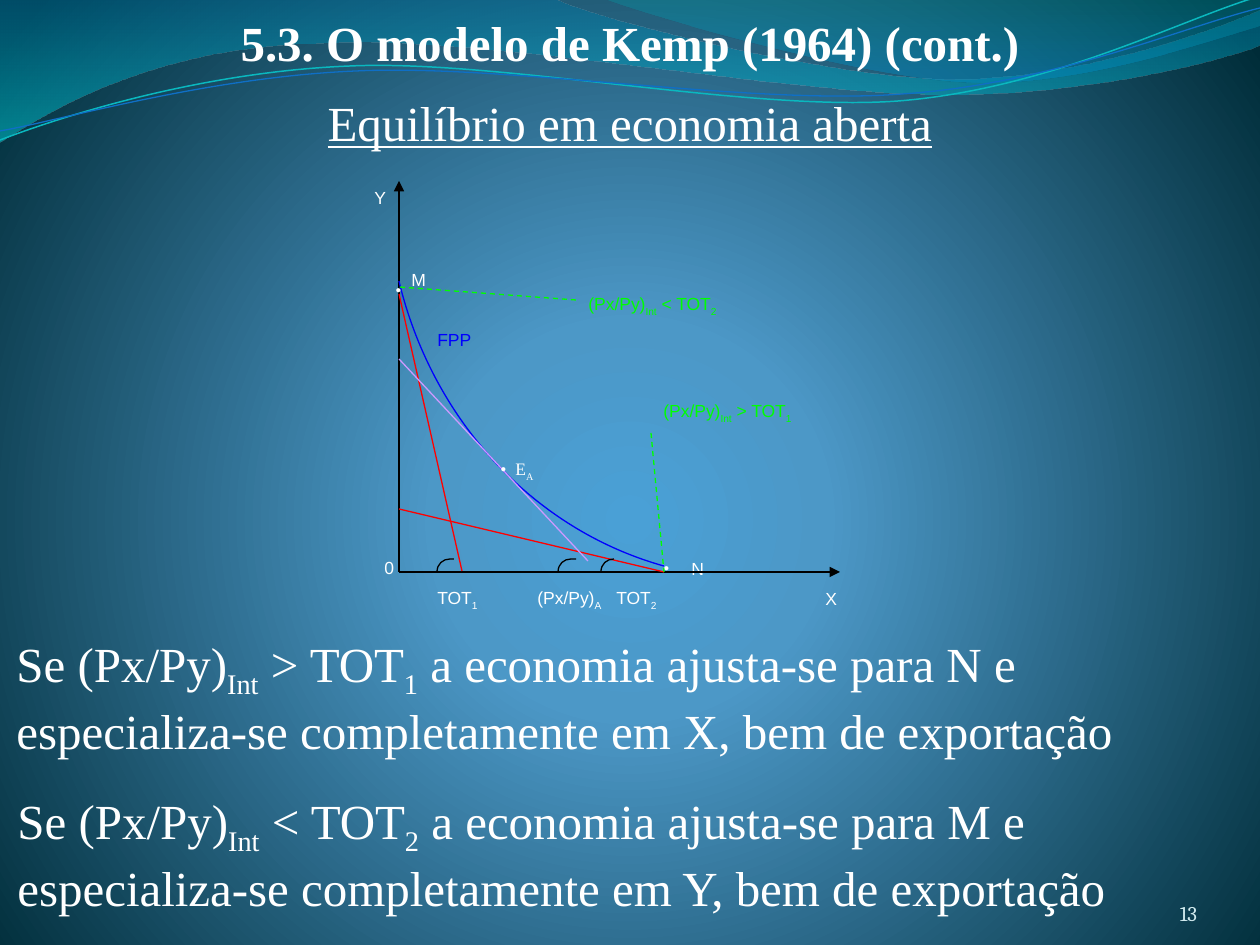
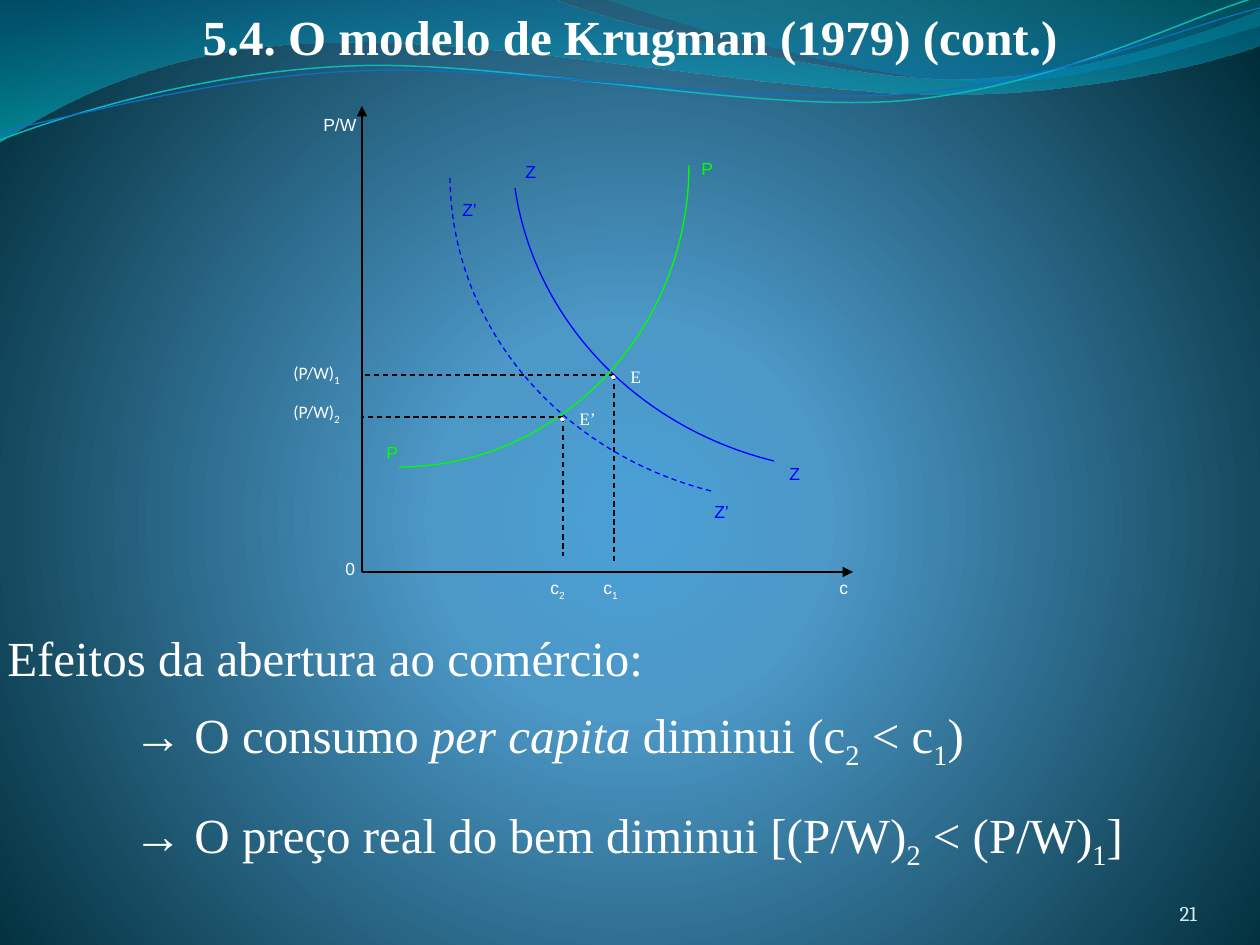
from collections import namedtuple

import pptx
import pptx.dml.color
import pptx.enum.dml
import pptx.enum.shapes
import pptx.enum.text
import pptx.oxml
import pptx.oxml.ns
import pptx.util
from lxml import etree

PX = 914400 / 126
WIDTH, HEIGHT = 1260, 945
WHITE, BLACK, BLUE, GREEN = "FFFFFF", "000000", "0000FF", "00FF00"
RED, VIOLET, PALE = "FF0000", "CC99FF", "D1EAEE"
SERIF, SANS = "Times New Roman", "Arial"
ALIGN = pptx.enum.text.PP_ALIGN
ANCHOR = pptx.enum.text.MSO_ANCHOR
qn = pptx.oxml.ns.qn

Run = namedtuple("Run", "text baseline italic size", defaults=(0, False, None))


def emu(px):
    return pptx.util.Emu(round(px * PX))


def color(hex_string):
    return pptx.dml.color.RGBColor.from_string(hex_string)


def sub(text):
    """Subscript of a diagram label."""
    return Run(text, -30)


def low(text, size=None):
    """Subscript of body text."""
    return Run(text, -25, size=size)


def use_gradient(element, stops, direction):
    """Swap the first solid fill for a gradient of (position, colour, opacity) stops."""
    marks = "".join(
        f'<a:gs pos="{pos * 1000}"><a:srgbClr val="{tint}">'
        f'<a:alpha val="{opacity * 1000}"/></a:srgbClr></a:gs>'
        for pos, tint, opacity in stops)
    gradient = pptx.oxml.parse_xml(
        f'<a:gradFill {pptx.oxml.ns.nsdecls("a")} rotWithShape="1">'
        f"<a:gsLst>{marks}</a:gsLst>{direction}</a:gradFill>")
    solid = element.find(".//" + qn("a:solidFill"))
    solid.getparent().replace(solid, gradient)


class Deck:
    GLOW = [(0, "4AA0D6", 100), (25, "4C98C7", 100), (100, "002C38", 100)]
    GLOW_CENTRE = ('<a:path path="circle"><a:fillToRect l="10000" t="110000" '
                   'r="10000" b="100000"/></a:path>')
    DOWNWARD = '<a:lin ang="5400000" scaled="0"/>'

    def __init__(self):
        self.prs = pptx.Presentation()
        self.prs.slide_width, self.prs.slide_height = emu(WIDTH), emu(HEIGHT)
        self.slide = None
        self.label_width = 0

    # Shared look: background, waves, title and page number
    def new_slide(self, title, title_top, number, label_width):
        self.slide = self.prs.slides.add_slide(self.prs.slide_layouts[6])
        self.label_width = label_width
        self.slide.background.fill.solid()
        use_gradient(self.slide.background.fill._xPr, self.GLOW, self.GLOW_CENTRE)
        self.waves()
        self.heading(title_top, title, bold=True)
        self.text(1092, 876, 105, 50, [number], 12, "Cambria", PALE,
                  align=ALIGN.RIGHT, anchor=ANCHOR.BOTTOM, inset=0)

    def waves(self):
        self.curve((0, 0), (554, -1), (600, 21, 837, 79, 955, 79),
                   (1075, 79, 1207, 33, 1260, 11), (1261, 45),
                   (1239, 55, 1096, 96, 940, 94), (784, 94, 481, 35, 324, 43),
                   (163, 45, 58, 105, -1, 142),
                   gradient=[(0, "0074A1", 45), (100, "00C6CF", 55)])
        self.curve((604, -1), (641, 14, 859, 78, 969, 82),
                   (1079, 87, 1211, 40, 1260, 26), (1260, 0),
                   gradient=[(0, "00A1A9", 30), (80, "008BBF", 45)])
        self.curve((0, 140), (60, 117, 199, 72, 349, 66),
                   (498, 59, 747, 112, 898, 101), (1050, 89, 1182, 19, 1257, -3),
                   tint="0AB8BF", weight=0.85)
        self.curve((0, 131), (59, 121, 207, 77, 357, 71),
                   (508, 64, 752, 106, 903, 94), (1053, 84, 1186, 26, 1260, 8),
                   tint="0F6FC6")

    # Text
    def text(self, x, y, w, h, runs, size, font, tint, align=ALIGN.LEFT,
             anchor=ANCHOR.TOP, inset=None, bold=False, underline=False):
        frame = self.slide.shapes.add_textbox(emu(x), emu(y), emu(w), emu(h)).text_frame
        frame.word_wrap = True
        frame.vertical_anchor = anchor
        if inset is not None:
            frame.margin_left = frame.margin_right = emu(inset)
            frame.margin_top = frame.margin_bottom = emu(inset)
        paragraph = frame.paragraphs[0]
        paragraph.alignment = align
        for item in runs:
            item = Run(item) if isinstance(item, str) else item
            run = paragraph.add_run()
            run.text = item.text
            run.font.name = font
            run.font.size = pptx.util.Pt(item.size or size)
            run.font.color.rgb = color(tint)
            run.font.bold, run.font.underline = bold, underline
            run.font.italic = item.italic
            if item.baseline:
                run.font._element.set("baseline", str(item.baseline * 1000))

    def heading(self, y, words, **style):
        self.text(0, y, WIDTH, 72, [words], 28, SERIF, WHITE, align=ALIGN.CENTER, **style)

    def body(self, x, y, h, *runs, w=WIDTH, anchor=ANCHOR.TOP):
        self.text(x, y, w, h, runs, 28, SERIF, WHITE, anchor=anchor)

    def label(self, x, y, *runs, tint=WHITE, font=SANS, w=None):
        self.text(x, y, w or self.label_width, 50, runs, 10, font, tint)

    def point(self, x, y, *name, gap=0):
        self.label(x, y, "•", font=SERIF)
        if name:
            self.label(x + gap, y, *name, font=SERIF)

    # Lines and curves
    def pen(self, line, tint, weight, dashed):
        line.color.rgb = color(tint)
        line.width = pptx.util.Pt(weight)
        if dashed:
            line.dash_style = pptx.enum.dml.MSO_LINE.DASH

    def line(self, start, end, tint=BLACK, dashed=False, arrow=False):
        connector = self.slide.shapes.add_connector(
            pptx.enum.shapes.MSO_CONNECTOR.STRAIGHT, *map(emu, start + end))
        self.pen(connector.line, tint, 0.75, dashed)
        properties = connector._element.spPr
        if arrow:
            etree.SubElement(properties.find(qn("a:ln")), qn("a:tailEnd"), type="triangle")
        etree.SubElement(properties, qn("a:effectLst"))

    def axes(self, origin, top, right):
        self.line(origin, (origin[0], top), arrow=True)
        self.line(origin, (right, origin[1]), arrow=True)

    def curve(self, start, *segments, tint=None, weight=0.75, dashed=False, gradient=None):
        """Segments are (x, y) for a straight piece or six numbers for a Bézier piece."""
        corners = [(emu(s[i]), emu(s[i + 1])) for s in segments for i in range(0, len(s), 2)]
        builder = self.slide.shapes.build_freeform(emu(start[0]), emu(start[1]), scale=1.0)
        builder.add_line_segments(corners, close=bool(gradient))
        shape = builder.convert_to_shape()
        shape.shadow.inherit = False

        # Join the three corners of each Bézier piece
        outline = shape._element.find(".//" + qn("a:path"))
        steps = iter(outline.findall(qn("a:lnTo")))
        for segment in segments:
            step = next(steps)
            if len(segment) == 6:
                bezier = etree.Element(qn("a:cubicBezTo"))
                step.addprevious(bezier)
                for piece in (step, next(steps), next(steps)):
                    bezier.append(piece[0])
                    outline.remove(piece)

        if gradient:
            shape.fill.solid()
            shape.fill.fore_color.rgb = color(WHITE)
            use_gradient(shape._element.spPr, gradient, self.DOWNWARD)
            shape.line.fill.background()
        else:
            shape.fill.background()
            self.pen(shape.line, tint, weight, dashed)

    def angle_mark(self, left, right, base):
        top = base - 13
        self.curve((right, top), (left + 13, top),
                   (left + 6, top, left, base - 8, left, base), tint=BLACK)


def kemp_slide(deck):
    deck.new_slide("5.3. O modelo de Kemp (1964) (cont.)", 6, "13", label_width=76)
    deck.heading(86, "Equilíbrio em economia aberta", underline=True, anchor=ANCHOR.MIDDLE)

    # Axes, with the corner names beneath them
    origin = (399, 572)
    deck.label(399, 263, "M")
    deck.label(679, 552, "N")
    deck.axes(origin, 181, 840)
    deck.label(813, 582, "X")
    deck.label(362, 181, "Y")
    deck.label(372, 551, "0")

    # Production frontier, terms of trade and autarky price
    deck.curve((664, 566), (535, 530, 433, 422, 399, 281), tint=BLUE)
    deck.label(425, 323, "FPP", tint=BLUE)
    deck.line((399, 294), (462, 571), RED)
    deck.line((664, 572), (399, 509), RED)
    deck.line((399, 359), (588, 561), VIOLET)
    for left, right in ((437, 454), (558, 576), (601, 614)):
        deck.angle_mark(left, right, origin[1])
    deck.label(425, 581, "TOT", sub("1"))
    deck.label(525, 581, "(Px/Py)", sub("A"), w=105)
    deck.label(604, 581, "TOT", sub("2"))

    # Equilibrium points
    deck.point(488, 452, "E", sub("A"), gap=15)
    deck.point(651, 551)
    deck.point(383, 273)

    # International prices
    deck.line((651, 433), (664, 572), GREEN, dashed=True)
    deck.line((576, 300), (399, 287), GREEN, dashed=True)
    for x, y, sign, index in ((651, 394, ">", "1"), (576, 287, "<", "2")):
        deck.label(x, y, "(Px/Py)", sub("Int"), f" {sign} TOT", sub(index),
                   tint=GREEN, w=170)

    # Conclusions
    for x, y, sign, index, corner, good in ((4, 631, ">", "1", "N", "X"),
                                            (5, 788, "<", "2", "M", "Y")):
        deck.body(x, y, 131, "Se (Px/Py)", low("Int"), f" {sign} TOT", low(index),
                  f" a economia ajusta-se para {corner} e especializa-se "
                  f"completamente em {good}, bem de exportação",
                  w=1256, anchor=ANCHOR.MIDDLE)


def krugman_slide(deck):
    deck.new_slide("5.4. O modelo de Krugman (1979) (cont.)", 0, "21", label_width=101)

    # Axes
    origin = (362, 572)
    deck.axes(origin, 106, 853)
    deck.label(827, 571, "c")
    deck.label(333, 552, "0")
    deck.label(311, 108, "P/W")

    # Curves and their names
    deck.curve((774, 461), (636, 427, 534, 319, 515, 188), tint=BLUE)
    deck.curve((399, 467), (559, 467, 689, 331, 689, 165), tint=GREEN)
    deck.curve((711, 491), (557, 452, 450, 323, 450, 175), tint=BLUE, dashed=True)
    for x, y, name, tint in ((374, 436, "P", GREEN), (689, 152, "P", GREEN),
                             (513, 155, "Z", BLUE), (777, 457, "Z", BLUE),
                             (450, 193, "Z’", BLUE), (702, 495, "Z’", BLUE)):
        deck.label(x, y, name, tint=tint)

    # Equilibria with their guides to both axes
    for x, y, foot, name, index, c_left, price_top in (
            (614, 375, 564, "E", "1", 591, 354),
            (563, 417, 556, "E’", "2", 538, 393)):
        deck.line((x, y), (x, foot), dashed=True)
        deck.line((x, y), (origin[0], y), dashed=True)
        deck.point(x - 16, y - 15, name, gap=20)
        deck.label(c_left, 571, "c", sub(index))
        deck.label(281, price_top, "(P/W)", low(index, size=11), font="Calibri")

    # Effects of opening to trade
    deck.body(-5, 621, 72, "Efeitos da abertura ao comércio:")
    deck.body(121, 698, 72, "→ O consumo ", Run("per capita ", italic=True),
              "diminui (c", low("2"), " < c", low("1"), ")", w=1134)
    deck.body(121, 798, 72, "→ O preço real do bem diminui [(P/W)", low("2"),
              " < (P/W)", low("1"), "]", w=1134)


def main():
    deck = Deck()
    kemp_slide(deck)
    krugman_slide(deck)
    deck.prs.save("out.pptx")


if __name__ == "__main__":
    main()
